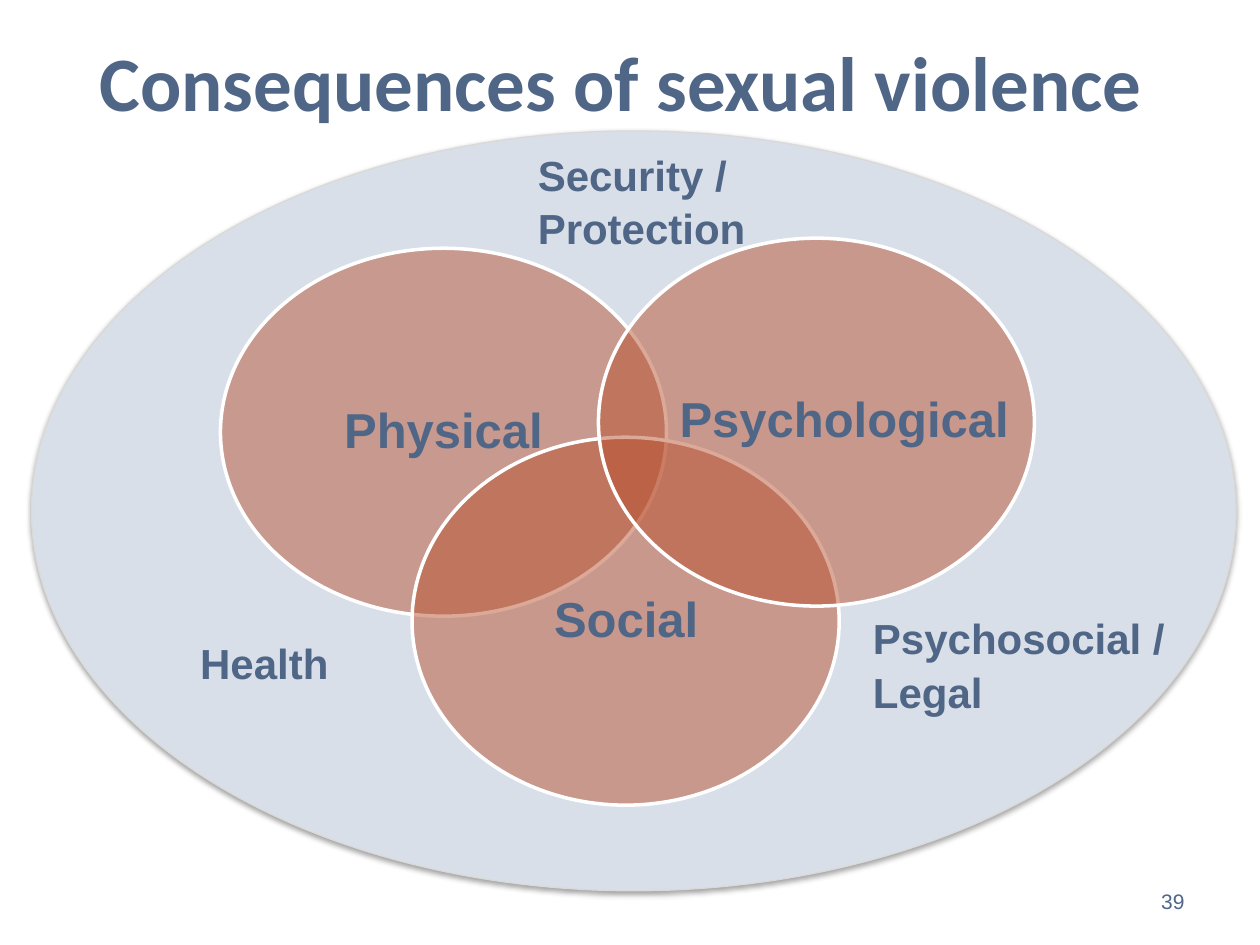
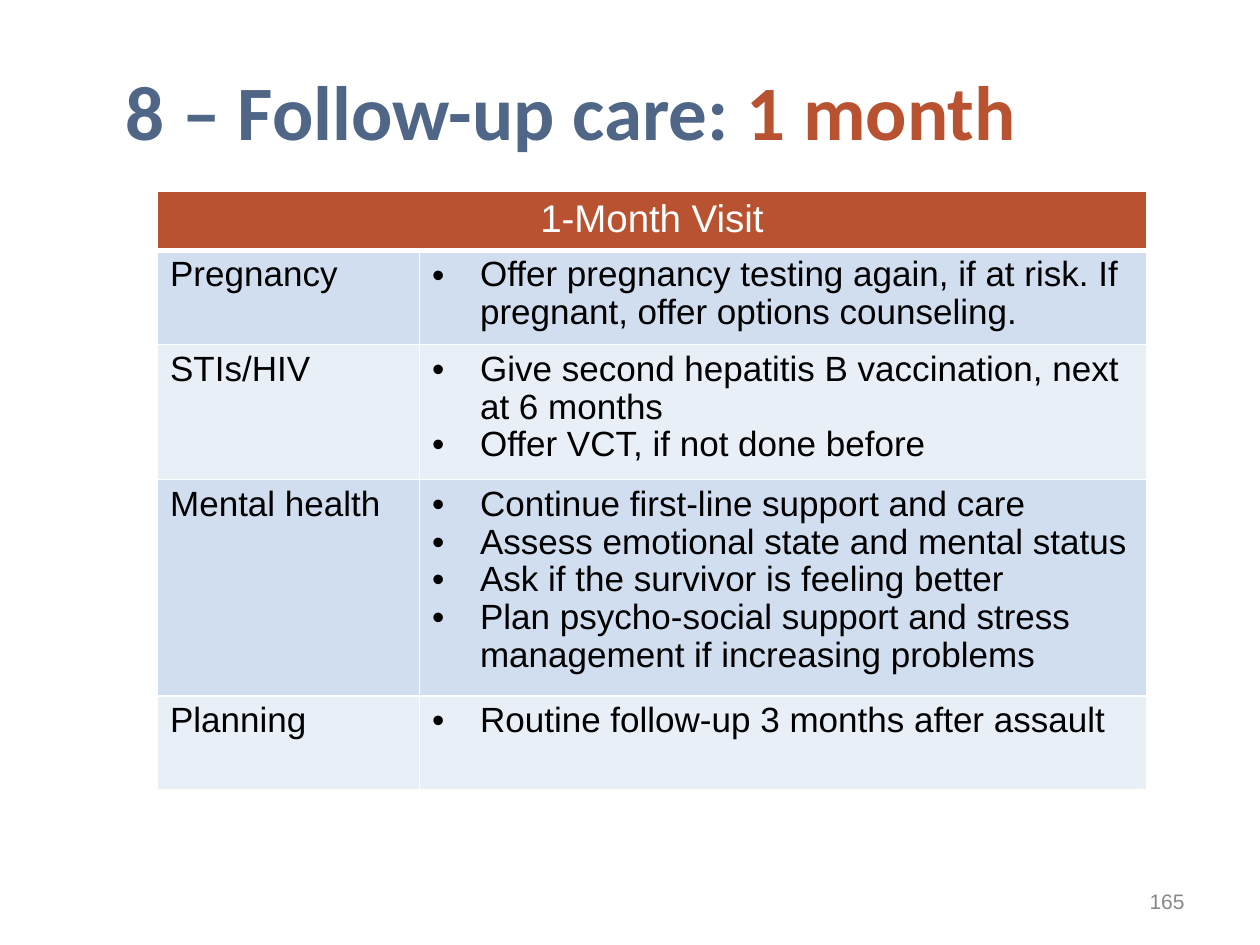
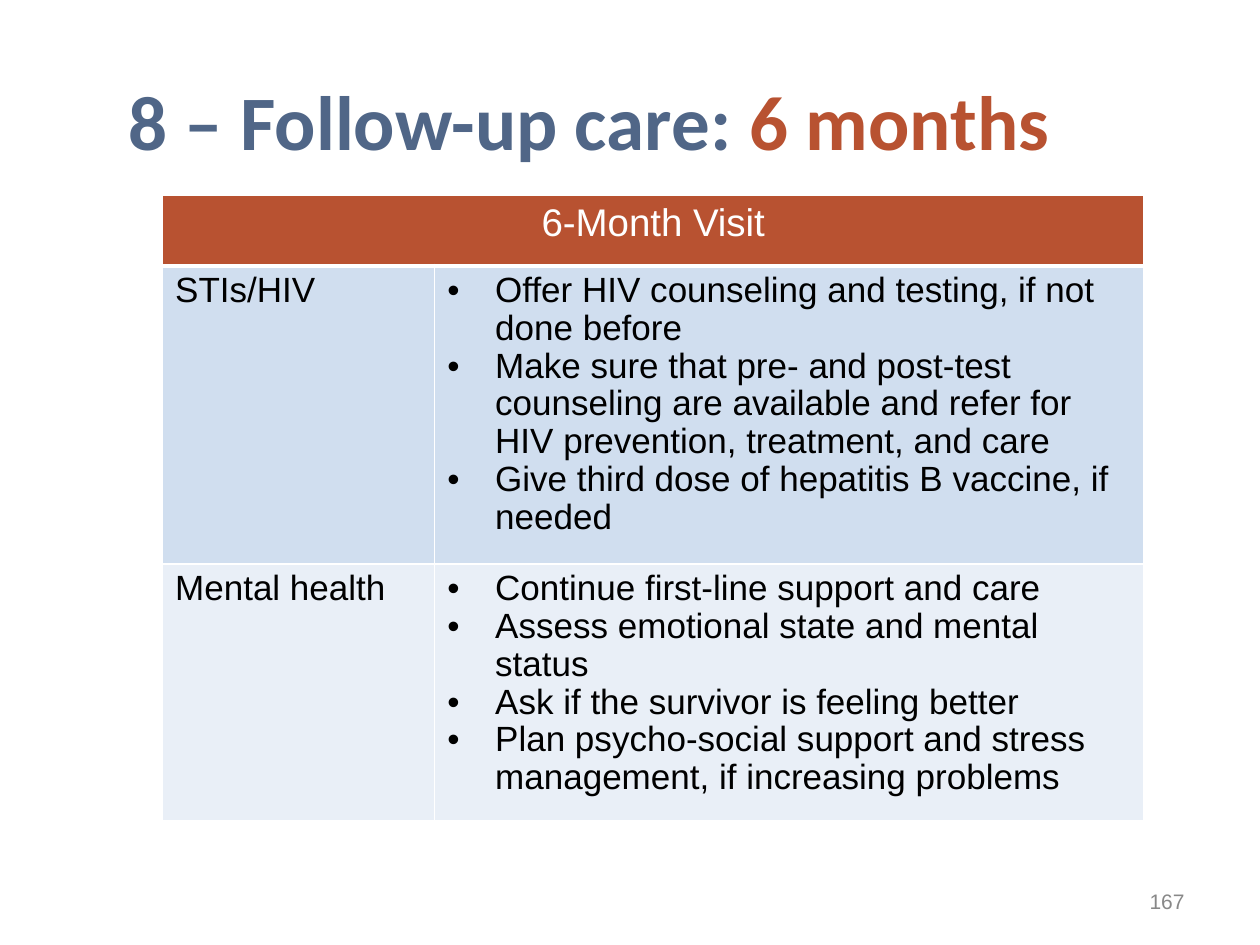
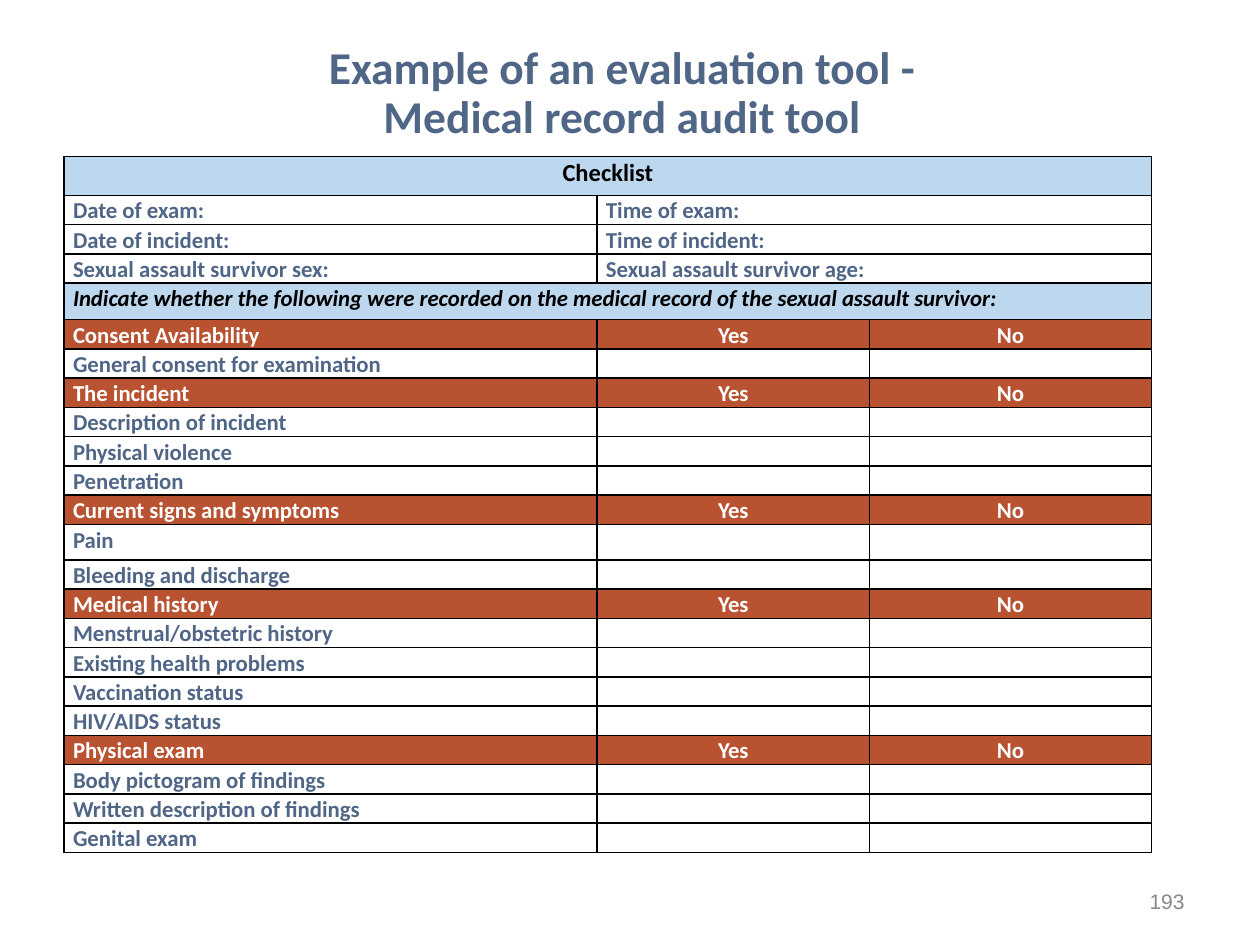
from lxml import etree
from pptx import Presentation
from pptx.dml.color import RGBColor
from pptx.enum.shapes import MSO_SHAPE
from pptx.enum.text import MSO_ANCHOR, PP_ALIGN
from pptx.oxml.ns import qn
from pptx.util import Inches, Pt

ELLIPSE = MSO_SHAPE.OVAL
LEFT, CENTER, RIGHT = PP_ALIGN.LEFT, PP_ALIGN.CENTER, PP_ALIGN.RIGHT
TOP, MIDDLE = MSO_ANCHOR.TOP, MSO_ANCHOR.MIDDLE

# Shared colours and fonts
BLUE, RUST, RUST_DEEP = "506687", "B85231", "B8502E"
WHITE, BLACK, GREY = "FFFFFF", "000000", "888888"
PALE, PALE_EDGE = "D9DFE9", "D9D9D7"
BANDS = ("D0DEEF", "E9EFF7")
HEADING_FILL = "BDD7EE"
BODY_FONT, TITLE_FONT = "Arial", "Calibri"


def color(value):
    return RGBColor.from_string(value)


def child(parent, tag, **attributes):
    """Append a DrawingML element with the given attributes."""
    element = etree.SubElement(parent, qn(tag))
    for name, value in attributes.items():
        element.set(name, str(value))
    return element


class Deck:
    """Holds the presentation, its style and the current slide."""

    def __init__(self):
        self.presentation = Presentation()
        self.presentation.slide_width = Inches(10)
        self.presentation.slide_height = Inches(7.5)
        self.slide = None

    def new_slide(self, number, number_color=GREY):
        layout = self.presentation.slide_layouts[6]
        self.slide = self.presentation.slides.add_slide(layout)
        self.text(7.17, 6.95, 2.33, 0.4, [number], size=12, ink=number_color,
                  bold=False, align=RIGHT, anchor=MIDDLE)

    def style(self, paragraph, size, ink, font=BODY_FONT, bold=False,
              italic=False, align=LEFT, spacing=None):
        paragraph.alignment = align
        if spacing:
            paragraph.line_spacing = spacing
        paragraph.font.name = font
        paragraph.font.size = Pt(size)
        paragraph.font.bold = bold
        paragraph.font.italic = italic
        if ink:
            paragraph.font.color.rgb = color(ink)

    def fill_frame(self, frame, lines, bullets=False, **style):
        for index, line in enumerate(lines):
            paragraph = frame.paragraphs[0] if index == 0 else frame.add_paragraph()
            paragraph.text = line
            if bullets:
                self.bullet(paragraph)
            self.style(paragraph, **style)

    def bullet(self, paragraph):
        properties = paragraph._p.get_or_add_pPr()
        properties.set("marL", str(Inches(0.38)))
        properties.set("indent", str(-Inches(0.38)))
        child(child(properties, "a:buClr"), "a:srgbClr", val=BLACK)
        child(properties, "a:buFont", typeface=BODY_FONT)
        child(properties, "a:buChar", char="•")

    def frame(self, left, top, width, height, anchor, inset=(0.1, 0.05)):
        box = self.slide.shapes.add_textbox(
            Inches(left), Inches(top), Inches(width), Inches(height))
        frame = box.text_frame
        frame.word_wrap = True
        frame.vertical_anchor = anchor
        frame.margin_left = frame.margin_right = Inches(inset[0])
        frame.margin_top = frame.margin_bottom = Inches(inset[1])
        return frame

    def text(self, left, top, width, height, lines, size=24, ink=BLUE, bold=True,
             align=LEFT, anchor=TOP, spacing=None, inset=(0.1, 0.05)):
        frame = self.frame(left, top, width, height, anchor, inset)
        self.fill_frame(frame, lines, size=size, ink=ink, bold=bold,
                        align=align, spacing=spacing)

    def title(self, left, top, width, height, text, accent="", size=44, align=LEFT):
        paragraph = self.frame(left, top, width, height, MIDDLE).paragraphs[0]
        paragraph.text = text
        self.style(paragraph, size, None if accent else BLUE, TITLE_FONT, bold=True,
                   align=align, spacing=0.9)
        if accent:
            paragraph.runs[0].font.color.rgb = color(BLUE)
            run = paragraph.add_run()
            run.text = accent
            run.font.color.rgb = color(RUST)

    def ellipse(self, left, top, width, height, fill, line, line_width,
                opacity=None, shadow=False):
        shape = self.slide.shapes.add_shape(
            ELLIPSE, Inches(left), Inches(top), Inches(width), Inches(height))
        shape.shadow.inherit = False
        shape.fill.solid()
        shape.fill.fore_color.rgb = color(fill)
        shape.line.color.rgb = color(line)
        shape.line.width = Pt(line_width)
        properties = shape._element.spPr
        if opacity:
            fill_color = properties.find(qn("a:solidFill")).find(qn("a:srgbClr"))
            child(fill_color, "a:alpha", val=opacity * 1000)
        if shadow:
            outer = child(properties.find(qn("a:effectLst")), "a:outerShdw",
                          blurRad=Pt(3.1), dist=Pt(1.6), dir=90 * 60000, rotWithShape=0)
            child(child(outer, "a:srgbClr", val=BLACK), "a:alpha", val=37000)

    def table(self, left, top, columns, rows):
        frame = self.slide.shapes.add_table(
            len(rows), len(columns), Inches(left), Inches(top),
            Inches(sum(columns)), Inches(sum(rows)))
        table = frame.table
        table.first_row = table.horz_banding = False
        for column, width in zip(table.columns, columns):
            column.width = Inches(width)
        for row, height in zip(table.rows, rows):
            row.height = Inches(height)
        return table

    def cell(self, cell, lines, fill=None, inset=(0.1, 0.05), border=WHITE,
             top=1, bottom=1, **style):
        cell.margin_left = cell.margin_right = Inches(inset[0])
        cell.margin_top = cell.margin_bottom = Inches(inset[1])
        properties = cell._tc.get_or_add_tcPr()
        for side, width in (("L", 1), ("R", 1), ("T", top), ("B", bottom)):
            line = child(properties, f"a:ln{side}", w=Pt(width))
            child(child(line, "a:solidFill"), "a:srgbClr", val=border)
        if fill:
            cell.fill.solid()
            cell.fill.fore_color.rgb = color(fill)
        else:
            cell.fill.background()
        self.fill_frame(cell.text_frame, lines, **style)
        if lines == [""]:
            end = child(cell.text_frame.paragraphs[0]._p, "a:endParaRPr")
            end.set("sz", str(style["size"] * 100))

    def visit_table(self, left, top, columns, heights, heading, topics):
        """Heading over banded rows of a topic and its bulleted actions."""
        table = self.table(left, top, columns, heights)
        table.cell(0, 0).merge(table.cell(0, 1))
        for column in range(2):
            self.cell(table.cell(0, column), [] if column else [heading], RUST,
                      bottom=3, size=22, ink=WHITE, align=CENTER)
        for row, (topic, actions) in enumerate(topics.items(), start=1):
            options = dict(fill=BANDS[(row - 1) % 2], top=3 if row == 1 else 1,
                           size=20, ink=BLACK, spacing=0.97)
            self.cell(table.cell(row, 0), [topic], **options)
            self.cell(table.cell(row, 1), actions, bullets=True, **options)

    def checklist(self, left, top, columns, heights, rows):
        """Ruled form; a row with fewer texts than columns spans its last one."""
        table = self.table(left, top, columns, heights)
        last = len(columns) - 1
        for row, (kind, texts) in enumerate(rows):
            size, ink, fill, italic = CHECKLIST_STYLES[kind]
            if len(texts) <= last:
                table.cell(row, len(texts) - 1).merge(table.cell(row, last))
            for column in range(last + 1):
                centered = kind == "heading" or (kind == "section" and column)
                lines = [texts[column]] if column < len(texts) else [""]
                self.cell(table.cell(row, column), lines, fill, inset=(0.07, 0),
                          border=BLACK, size=size, ink=ink, font=TITLE_FONT, bold=True,
                          italic=italic, align=CENTER if centered else LEFT, spacing=1.07)


# Checklist row kinds: size, ink, fill, italic
CHECKLIST_STYLES = {
    "heading": (14, BLACK, HEADING_FILL, False),
    "note": (13, BLACK, HEADING_FILL, True),
    "section": (13, WHITE, RUST, False),
    "item": (13, BLUE, None, False),
}

MENTAL_HEALTH = ["Continue first-line support and care",
                 "Assess emotional state and mental status",
                 "Ask if the survivor is feeling better"]


def consequences(deck):
    deck.new_slide("39", BLUE)
    deck.title(0.69, -0.04, 8.9, 1.45, "Consequences of sexual violence")
    deck.ellipse(0.25, 1.04, 9.56, 6.03, PALE, PALE_EDGE, 0.75, shadow=True)
    # Overlapping circles: name, fill, left, top, width, label left, label width
    circles = [("Physical", RUST, 1.75, 1.97, 3.54, 2.27, 2.5),
               ("Social", RUST_DEEP, 3.27, 3.47, 3.39, 3.77, 2.4),
               ("Psychological", RUST_DEEP, 4.75, 1.89, 3.46, 5.26, 2.88)]
    for name, fill, left, top, width, label_left, label_width in circles:
        deck.ellipse(left, top, width, 2.92, fill, WHITE, 2, opacity=49)
        deck.text(label_left, top + 0.43, label_width, 2.06, [name], size=28,
                  align=CENTER, anchor=MIDDLE, spacing=0.9, inset=(0.12, 0.12))
    # Response sectors around the circles
    for left, top, width, height, lines in [
            (6.83, 4.79, 2.62, 0.91, ["Psychosocial /", "Legal"]),
            (4.17, 1.11, 2.53, 0.91, ["Security /", "Protection"]),
            (1.49, 4.99, 2.53, 0.5, ["Health"])]:
        deck.text(left, top, width, height, lines, spacing=1.06)


def one_month(deck):
    deck.new_slide("165")
    deck.title(0.9, 0.29, 9, 1.25, "8 – Follow-up care: ", "1 month")
    deck.visit_table(1.25, 1.52, [2.08, 5.77], [0.45, 0.74, 1.06, 1.71, 0.74],
                     "1-Month Visit", {
        "Pregnancy": ["Offer pregnancy testing again, if at risk. "
                      "If pregnant, offer options counseling."],
        "STIs/HIV": ["Give second hepatitis B vaccination, next at 6 months",
                     "Offer VCT, if not done before"],
        "Mental health": MENTAL_HEALTH + [
            "Plan psycho-social support and stress management if increasing problems"],
        "Planning": ["Routine follow-up 3 months after assault"],
    })


def six_months(deck):
    deck.new_slide("167")
    deck.title(0.92, 0.37, 9, 1.25, "8 – Follow-up care: ", "6 months")
    deck.visit_table(1.29, 1.55, [2.16, 5.63], [0.56, 1.9, 1.69], "6-Month Visit", {
        "STIs/HIV": ["Offer HIV counseling and testing, if not done before",
                     "Make sure that pre- and post-test counseling are available and "
                     "refer for HIV prevention, treatment, and care",
                     "Give third dose of hepatitis B vaccine, if needed"],
        "Mental health": MENTAL_HEALTH + [
            "Plan psycho-social support and stress management, if increasing problems"],
    })


def audit_tool(deck):
    deck.new_slide("193")
    deck.title(0.51, 0.33, 8.86, 0.84,
               "Example of an evaluation tool -\nMedical record audit tool",
               size=26, align=CENTER)
    sections = {
        "Consent Availability": ["General consent for examination"],
        "The incident": ["Description of incident", "Physical violence", "Penetration"],
        "Current signs and symptoms": ["Pain", "Bleeding and discharge"],
        "Medical history": ["Menstrual/obstetric history", "Existing health problems",
                            "Vaccination status", "HIV/AIDS status"],
        "Physical exam": ["Body pictogram of findings",
                          "Written description of findings", "Genital exam"],
    }
    rows = [
        ("heading", ["Checklist"]),
        ("item", ["Date of exam:", "Time of exam:"]),
        ("item", ["Date of incident:", "Time of incident:"]),
        ("item", ["Sexual assault survivor sex:", "Sexual assault survivor age:"]),
        ("note", ["Indicate whether the following were recorded on the medical record "
                  "of the sexual assault survivor:"]),
    ]
    for section, items in sections.items():
        rows.append(("section", [section, "Yes", "No"]))
        rows += [("item", [item, "", ""]) for item in items]
    tall = {"Checklist": 0.31, rows[4][1][0]: 0.29, "Pain": 0.28}
    heights = [tall.get(texts[0], 0.23) for _, texts in rows]
    deck.checklist(0.51, 1.24, [4.23, 2.16, 2.24], heights, rows)


def main():
    deck = Deck()
    for build in (consequences, one_month, six_months, audit_tool):
        build(deck)
    deck.presentation.save("out.pptx")


if __name__ == "__main__":
    main()
